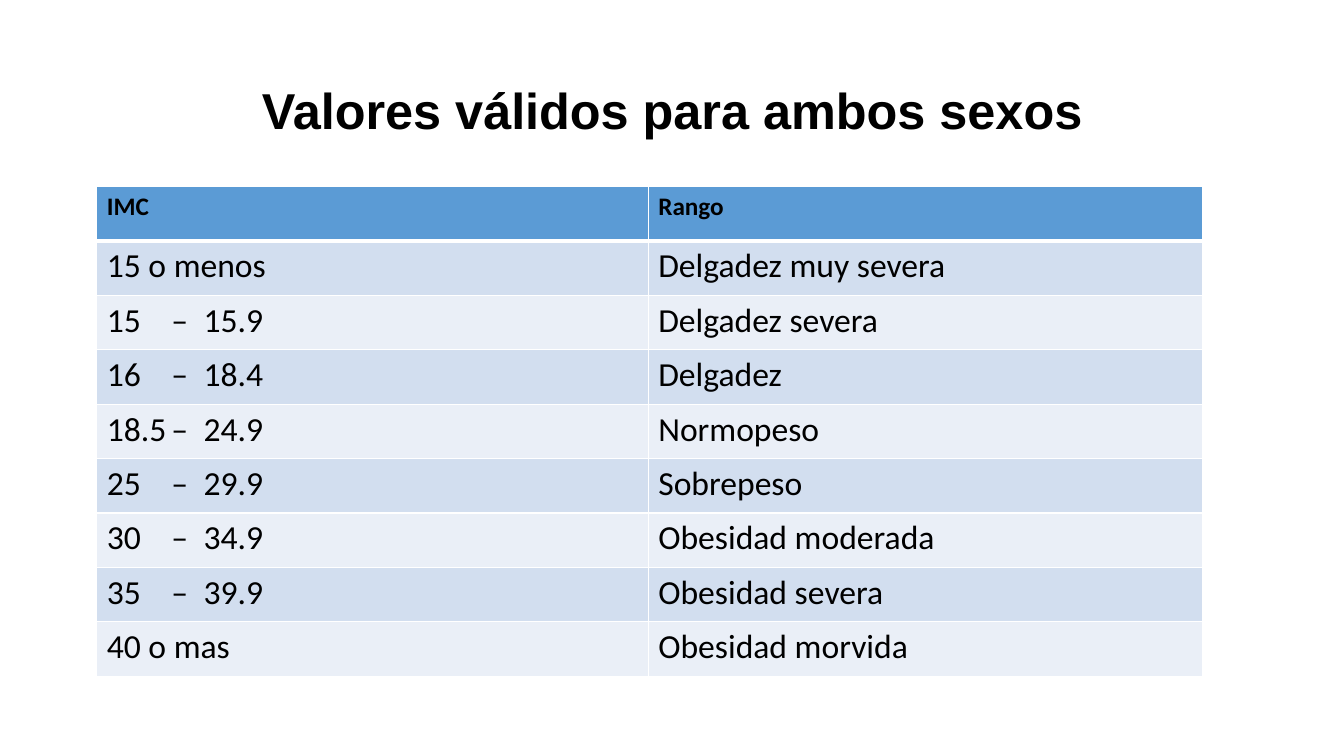
from lxml import etree
from pptx import Presentation
from pptx.dml.color import RGBColor
from pptx.enum.text import MSO_ANCHOR, MSO_AUTO_SIZE, PP_ALIGN
from pptx.oxml.ns import qn
from pptx.util import Inches, Pt

CENTER = PP_ALIGN.CENTER
MIDDLE = MSO_ANCHOR.MIDDLE
NO_AUTOFIT = MSO_AUTO_SIZE.NONE
TITLE_ONLY = 5

HEADINGS = ("IMC", "Rango")
RANGES = [
    ("15 o menos", "Delgadez muy severa"),
    ("15\t–\t15.9", "Delgadez severa"),
    ("16\t–\t18.4", "Delgadez"),
    ("18.5\t–\t24.9", "Normopeso"),
    ("25\t–\t29.9", "Sobrepeso"),
    ("30\t–\t34.9", "Obesidad moderada"),
    ("35\t–\t39.9", "Obesidad severa"),
    ("40 o mas", "Obesidad morvida"),
]
TAB_STOPS = (0.64, 0.96)


def color(hex_code):
    return RGBColor.from_string(hex_code)


class SlideBuilder:
    INK = "000000"
    BORDER = "FFFFFF"
    HEADER = "5B9BD5"
    BANDS = ("D2DEEF", "EAEFF7")

    def __init__(self, prs):
        self.slide = prs.slides.add_slide(prs.slide_layouts[TITLE_ONLY])

    def run(self, paragraph, text, size, font, bold=False):
        run = paragraph.add_run()
        run.text = text
        run.font.size = Pt(size)
        run.font.name = font
        run.font.bold = bold
        run.font.color.rgb = color(self.INK)

    def title(self, text, left, top, width, height):
        title = self.slide.shapes.title
        title.left, title.top = Inches(left), Inches(top)
        title.width, title.height = Inches(width), Inches(height)
        frame = title.text_frame
        frame.auto_size = NO_AUTOFIT
        frame.vertical_anchor = MIDDLE
        paragraph = frame.paragraphs[0]
        paragraph.alignment = CENTER
        paragraph.line_spacing = 0.9
        self.run(paragraph, text, 36, "Arial", bold=True)

    def border(self, cell, side, width):
        line = etree.SubElement(cell._tc.get_or_add_tcPr(), qn(f"a:ln{side}"), w=str(Pt(width)))
        fill = etree.SubElement(line, qn("a:solidFill"))
        etree.SubElement(fill, qn("a:srgbClr"), val=self.BORDER)

    def tabs(self, paragraph):
        tab_list = etree.SubElement(paragraph._p.get_or_add_pPr(), qn("a:tabLst"))
        for stop in TAB_STOPS:
            etree.SubElement(tab_list, qn("a:tab"), pos=str(Inches(stop)), algn="l")

    def cell(self, cell, text, row):
        is_header = row == 0
        for side in "LRTB":
            thick = (is_header and side == "B") or (row == 1 and side == "T")
            self.border(cell, side, 3 if thick else 1)
        cell.fill.solid()
        cell.fill.fore_color.rgb = color(self.HEADER if is_header else self.BANDS[(row - 1) % 2])
        paragraph = cell.text_frame.paragraphs[0]
        if "\t" in text:
            self.tabs(paragraph)
        self.run(paragraph, text, 18 if is_header else 24, "Calibri", bold=is_header)

    def table(self, rows, left, top, column_widths, row_height):
        table = self.slide.shapes.add_table(
            len(rows), len(column_widths), Inches(left), Inches(top),
            Inches(sum(column_widths)), Inches(row_height * len(rows))).table
        for column, width in zip(table.columns, column_widths):
            column.width = Inches(width)
        for row, texts in enumerate(rows):
            table.rows[row].height = Inches(row_height)
            for column, text in enumerate(texts):
                self.cell(table.cell(row, column), text, row)


def main():
    prs = Presentation()
    prs.slide_width, prs.slide_height = Inches(13.33), Inches(7.5)
    builder = SlideBuilder(prs)
    builder.title("Valores válidos para ambos sexos", 0.92, 0.4, 11.5, 1.45)
    builder.table([HEADINGS, *RANGES], 0.96, 1.85, (5.47, 5.5), 0.54)
    prs.save("out.pptx")


if __name__ == "__main__":
    main()
